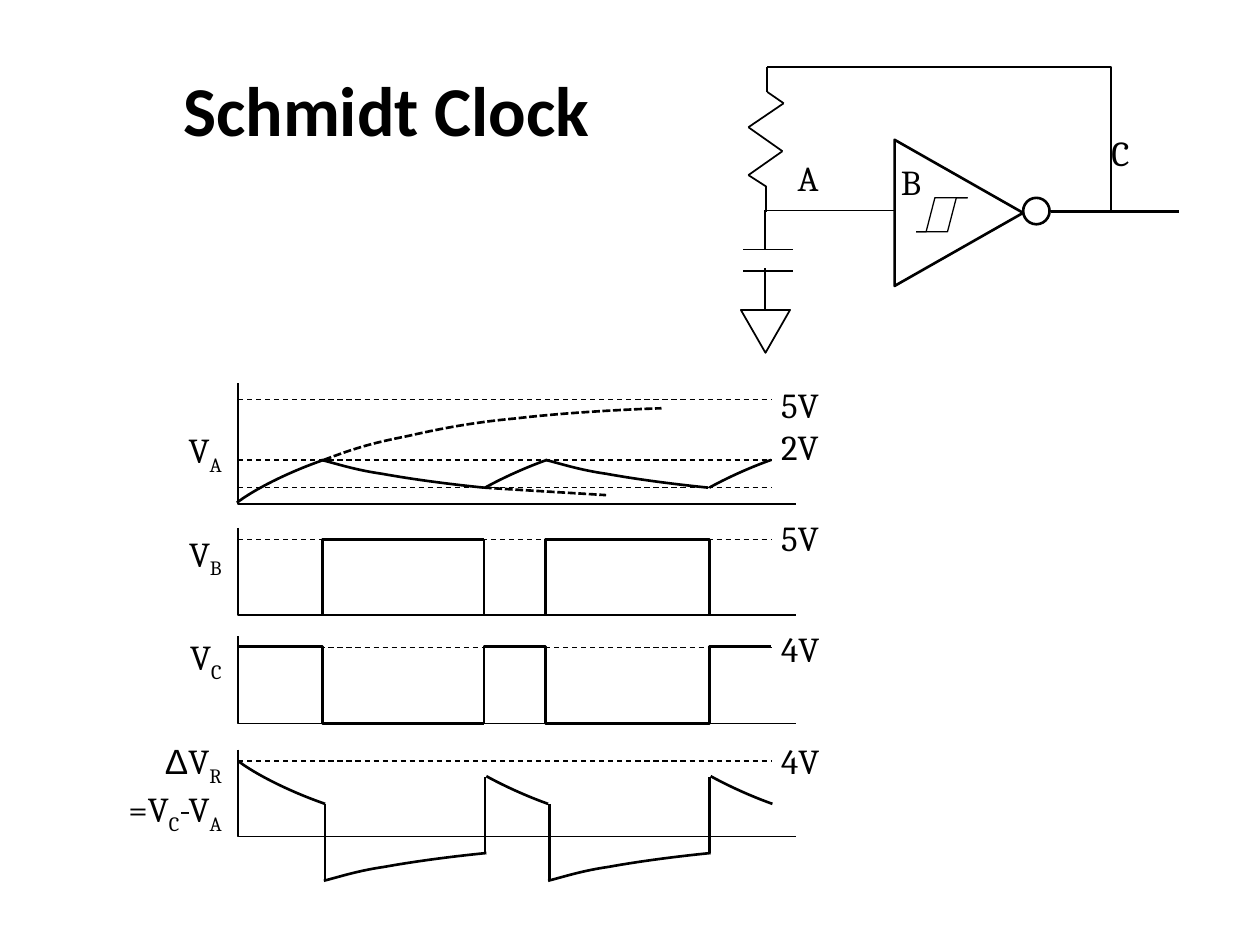
from dataclasses import dataclass

import lxml.etree
import pptx
import pptx.dml.color
import pptx.enum.dml
import pptx.enum.shapes
import pptx.enum.text
import pptx.oxml.ns
import pptx.util

Inches = pptx.util.Inches
qn = pptx.oxml.ns.qn
Point = tuple[float, float]
COLORS = {"ink": "000000", "paper": "FFFFFF"}
DASH = pptx.enum.dml.MSO_LINE.DASH
SHORT_DASH = pptx.enum.dml.MSO_LINE.SQUARE_DOT
SHAPE = pptx.enum.shapes.MSO_SHAPE
ALIGN = pptx.enum.text.PP_ALIGN
PERIOD = 1.78  # width of one clock cycle


@dataclass
class Stroke:
    points: list[Point]
    weight: float = 1
    dash: object = None
    curved: bool = False  # points are the controls of cubic curves


@dataclass
class Panel:
    top: float
    height: float
    levels: list[float]  # dashed reference voltages


def rgb(name: str) -> pptx.dml.color.RGBColor:
    return pptx.dml.color.RGBColor.from_string(COLORS[name])


def style_line(shape, weight: float, dash=None) -> None:
    shape.line.color.rgb = rgb("ink")
    shape.line.width = pptx.util.Pt(weight)
    if dash is not None:
        shape.line.dash_style = dash


def bend(shape) -> None:
    """Turn every three line segments into one cubic curve."""
    path = next(shape._element.iter(qn("a:path")))
    segments = path.findall(qn("a:lnTo"))
    for first in range(0, len(segments), 3):
        curve = lxml.etree.SubElement(path, qn("a:cubicBezTo"))
        for segment in segments[first:first + 3]:
            curve.append(segment[0])
            path.remove(segment)


def draw_stroke(shapes, stroke: Stroke) -> None:
    """Draw two points as a connector, more as an open outline."""
    points = [(Inches(x), Inches(y)) for x, y in stroke.points]
    if len(points) == 2:
        shape = shapes.add_connector(
            pptx.enum.shapes.MSO_CONNECTOR.STRAIGHT, *points[0], *points[1])
        lxml.etree.SubElement(shape._element.spPr, qn("a:effectLst"))
    else:
        builder = shapes.build_freeform(*points[0])
        builder.add_line_segments(points[1:], close=False)
        shape = builder.convert_to_shape()
        shape.shadow.inherit = False
        shape.fill.background()
        if stroke.curved:
            bend(shape)
    style_line(shape, stroke.weight, stroke.dash)


def draw_curve(shapes, controls: list[Point], dash=None) -> None:
    draw_stroke(shapes, Stroke(controls, 1.5, dash, True))


def shift(points: list[Point], distance: float) -> list[Point]:
    return [(x + distance, y) for x, y in points]


def mirror(points: list[Point], total: float, distance: float) -> list[Point]:
    """Turn a curve upside down: y becomes total - y."""
    return [(x + distance, total - y) for x, y in points]


def draw_shape(shapes, kind, left, top, width, height, weight, rotation=0, fill=None) -> None:
    shape = shapes.add_shape(kind, Inches(left), Inches(top), Inches(width), Inches(height))
    shape.shadow.inherit = False
    shape.rotation = rotation
    if fill:
        shape.fill.solid()
        shape.fill.fore_color.rgb = rgb(fill)
    else:
        shape.fill.background()
    style_line(shape, weight)


def set_font(font, name: str, size: float, bold: bool = False) -> None:
    font.name, font.size, font.bold = name, pptx.util.Pt(size), bold
    font.color.rgb = rgb("ink")


def add_text_frame(shapes, left, top, width, height, margin: float = 0):
    frame = shapes.add_textbox(
        Inches(left), Inches(top), Inches(width), Inches(height)).text_frame
    frame.word_wrap = True
    frame.margin_left = frame.margin_right = Inches(margin)
    frame.margin_top = frame.margin_bottom = Inches(margin / 2)
    return frame


def draw_label(shapes, lines: list[str], left, top, width, height) -> None:
    frame = add_text_frame(shapes, left, top, width, height)
    frame.text = "\n".join(lines)
    for paragraph in frame.paragraphs:
        set_font(paragraph.font, "Cambria", 20)


def add_symbol(paragraph, base: str, subscript: str) -> None:
    paragraph.add_run().text = base
    run = paragraph.add_run()
    run.text = subscript
    run.font._element.set("baseline", "-25000")


def draw_title(shapes) -> None:
    frame = add_text_frame(shapes, 1.02, 0.48, 4.09, 0.77, 0.1)
    frame.text = "Schmidt Clock"
    frame.paragraphs[0].alignment = ALIGN.CENTER
    set_font(frame.paragraphs[0].font, "Calibri", 40, True)


def draw_circuit(shapes) -> None:
    resistor = [(6.09, 0.53), (6.09, 0.73), (6.22, 0.82), (5.94, 1.01),
                (6.21, 1.2), (5.94, 1.39), (6.08, 1.48), (6.08, 1.68)]
    strokes = [Stroke(list(ends)) for ends in zip(resistor, resistor[1:])]
    strokes += [
        Stroke([(7.1, 1.67), (6.06, 1.67)]),  # input
        Stroke([(5.9, 1.98), (6.29, 1.98)]),  # capacitor
        Stroke([(5.9, 2.15), (6.29, 2.15)]),
        Stroke([(6.07, 1.98), (6.07, 1.67)]),
        Stroke([(6.07, 2.45), (6.07, 2.13)]),
        Stroke([(8.34, 1.68), (9.36, 1.68)], 1.5),  # output
        Stroke([(6.09, 0.53), (8.82, 0.53), (8.82, 1.68)]),  # feedback
        Stroke([(7.27, 1.84), (7.52, 1.84), (7.59, 1.57), (7.68, 1.57)], 0.75),
        Stroke([(7.68, 1.57), (7.42, 1.57), (7.35, 1.84), (7.27, 1.84)], 0.75),
    ]
    for stroke in strokes:
        draw_stroke(shapes, stroke)
    # Ground, inverter and its bubble
    draw_shape(shapes, SHAPE.ISOSCELES_TRIANGLE, 5.88, 2.46, 0.39, 0.34, 1, 180, "paper")
    draw_shape(shapes, SHAPE.ISOSCELES_TRIANGLE, 7.03, 1.18, 1.16, 1.02, 1.5, 90)
    draw_shape(shapes, SHAPE.OVAL, 8.12, 1.57, 0.21, 0.21, 1.5)
    for name, left, top in (("A", 6.33, 1.24), ("B", 7.15, 1.27), ("C", 8.82, 1.04)):
        draw_label(shapes, [name], left, top, 0.34, 0.45)


def draw_axes(shapes) -> None:
    panels = [Panel(3.04, 0.96, [3.17, 3.65, 3.87])]
    panels += [Panel(top, 0.69, [top + 0.09]) for top in (4.19, 5.05, 5.95)]
    for panel in panels:
        bottom = panel.top + panel.height
        draw_stroke(shapes, Stroke([(1.89, panel.top), (1.89, bottom), (6.32, bottom)], 0.75))
        for level in panel.levels:
            draw_stroke(shapes, Stroke([(1.89, level), (6.13, level)], 0.75, DASH))
    # Voltages on the right
    draw_label(shapes, ["5V", "2V"], 6.2, 3.04, 0.51, 0.71)
    for text, top in (("5V", 4.1), ("4V", 4.98), ("4V", 5.87)):
        draw_label(shapes, [text], 6.2, top, 0.51, 0.42)


def draw_signal_names(shapes) -> None:
    frame = add_text_frame(shapes, 0.85, 3.4, 0.91, 3.48)
    for index, name in enumerate("ABCR"):
        paragraph = frame.add_paragraph() if index else frame.paragraphs[0]
        paragraph.alignment = ALIGN.RIGHT
        paragraph.space_after = pptx.util.Pt(32)
        set_font(paragraph.font, "Cambria", 20)
        if name == "R":
            delta = paragraph.add_run()
            delta.text = "Δ"
            delta.font.name = "Arial"
        add_symbol(paragraph, "V", name)
    paragraph.add_line_break()
    add_symbol(paragraph, "=V", "C")
    add_symbol(paragraph, "-V", "A")


def draw_square_wave(shapes, start: float, other: float) -> None:
    first = [(1.89, start), (2.56, start), (2.56, other), (3.84, other)]
    second = [(3.84, other), (3.84, start), (4.33, start), (4.33, other),
              (5.63, other), (5.63, start), (6.12, start)]
    for points in (first, second):
        draw_stroke(shapes, Stroke(points, 1.5))


def draw_waves(shapes) -> None:
    charge = [(1.88, 3.99), (2.01, 3.89), (2.28, 3.75), (2.57, 3.65)]
    fall = [(2.55, 3.65), (2.67, 3.68), (2.82, 3.73), (3.03, 3.76),
            (3.25, 3.8), (3.54, 3.84), (3.84, 3.87)]
    rise = [(3.85, 3.87), (3.85, 3.87), (4.06, 3.75), (4.34, 3.65)]
    charge_on = [(2.57, 3.65), (2.86, 3.54), (2.99, 3.51), (3.24, 3.46), (3.5, 3.4),
                 (3.77, 3.35), (4.1, 3.32), (4.43, 3.28), (4.93, 3.25), (5.25, 3.24)]
    fall_on = [(3.84, 3.87), (4.13, 3.89), (4.49, 3.91), (4.81, 3.93)]
    # Capacitor voltage
    capacitor = shapes.add_group_shape().shapes
    draw_curve(capacitor, charge)
    for tail in (charge_on, fall_on):
        draw_curve(capacitor, tail, SHORT_DASH)
    # Inverter input and output
    draw_square_wave(shapes, 4.88, 4.28)
    draw_square_wave(shapes, 5.13, 5.74)
    # Resistor voltage is the capacitor voltage upside down
    draw_curve(shapes, mirror(charge, 10.03, 0.01))
    for cycle in range(2):
        offset = cycle * PERIOD
        for curve, total, nudge in ((fall, 10.64, 0.02), (rise, 10.03, 0.01)):
            draw_curve(capacitor, shift(curve, offset))
            draw_curve(shapes, mirror(curve, total, offset + nudge))
        for x, top, bottom in ((2.58, 6.38, 6.99), (3.85, 6.17, 6.77)):
            draw_stroke(shapes, Stroke([(x + offset, top), (x + offset, bottom)], 1.5))


def main() -> None:
    presentation = pptx.Presentation()
    presentation.slide_width, presentation.slide_height = Inches(10), Inches(7.5)
    shapes = presentation.slides.add_slide(presentation.slide_layouts[6]).shapes
    draw_title(shapes)
    draw_circuit(shapes.add_group_shape().shapes)
    draw_axes(shapes)
    draw_signal_names(shapes)
    draw_waves(shapes)
    presentation.save("out.pptx")


if __name__ == "__main__":
    main()
